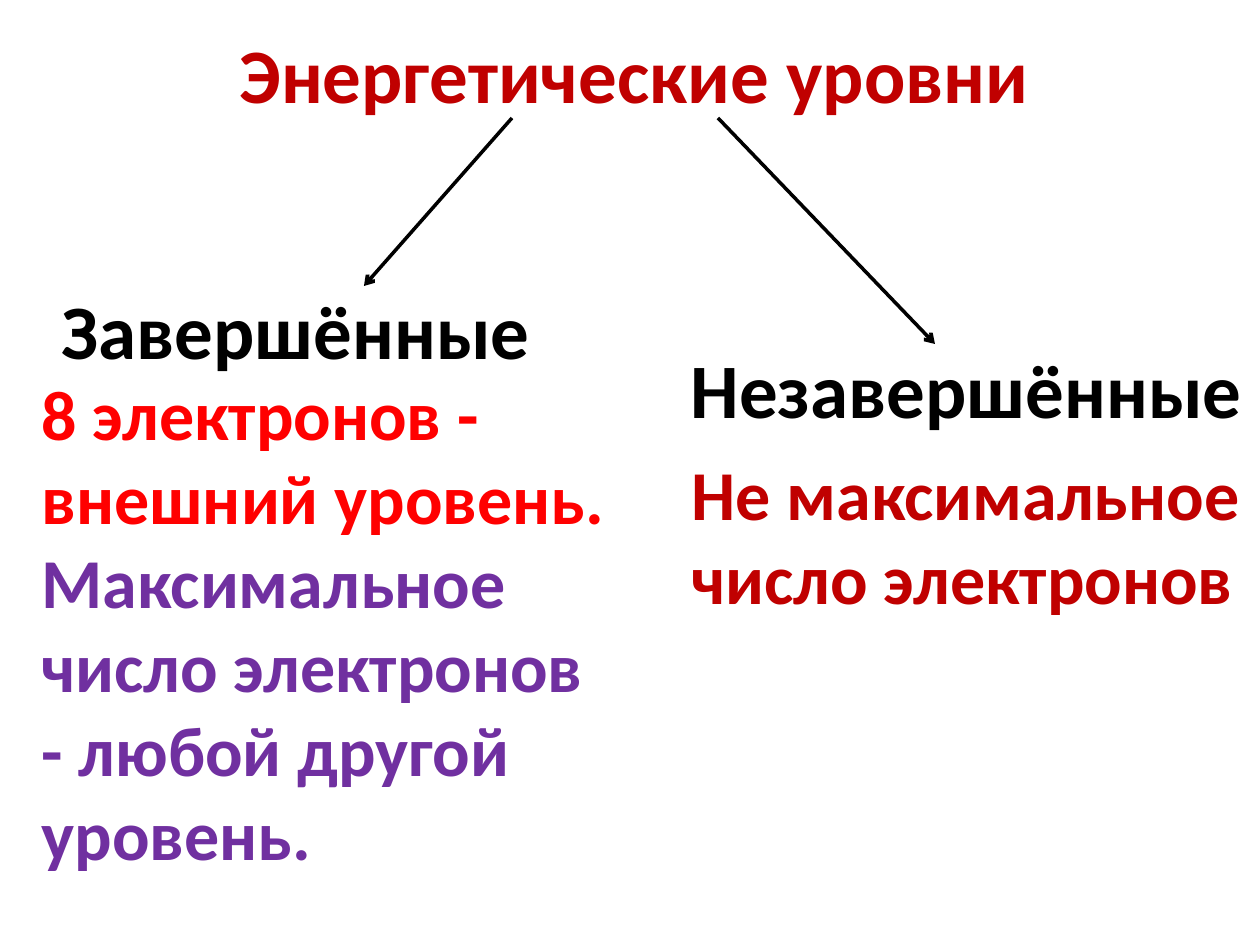
"""Build a slide that splits energy levels into complete and incomplete ones."""
from dataclasses import dataclass

from lxml import etree
from pptx import Presentation
from pptx import util as u
from pptx.dml.color import RGBColor
from pptx.enum import shapes, text
from pptx.oxml.ns import qn

SCALE = u.Inches(1) / 126


@dataclass(frozen=True)
class Theme:
    font: str = "Calibri"
    heading_size: int = 44
    body_size: int = 40
    line_width: int = 2
    dark_red: str = "C00000"
    red: str = "FF0000"
    purple: str = "7030A0"
    black: str = "000000"


@dataclass(frozen=True)
class Line:
    words: str
    color: str


@dataclass(frozen=True)
class Block:
    placeholder: int
    box: tuple[int, int, int, int]
    size: int
    lines: tuple[Line, ...]
    wrap: bool = False


@dataclass(frozen=True)
class Arrow:
    start: tuple[int, int]
    end: tuple[int, int]


THEME = Theme()
BLOCKS = (
    Block(0, (227, 20, 823, 106), THEME.heading_size,
          (Line("Энергетические уровни", THEME.dark_red),)),
    Block(1, (49, 276, 499, 106), THEME.heading_size,
          (Line("Завершённые", THEME.black),)),
    Block(3, (678, 335, 582, 106), THEME.heading_size,
          (Line("Незавершённые", THEME.black),)),
    Block(2, (29, 364, 601, 522), THEME.body_size,
          (Line("8 электронов - внешний уровень.", THEME.red),
           Line("Максимальное число электронов - любой другой уровень.", THEME.purple)),
          wrap=True),
    Block(4, (679, 444, 581, 183), THEME.body_size,
          (Line("Не максимальное число электронов", THEME.dark_red),), wrap=True),
)
ARROWS = (Arrow((512, 118), (364, 286)), Arrow((718, 118), (935, 344)))


def px(length: int) -> u.Emu:
    return u.Emu(round(length * SCALE))


def write_line(paragraph, line: Line, size: int) -> None:
    paragraph.text = line.words
    paragraph.alignment = text.PP_ALIGN.LEFT
    paragraph.space_before = u.Pt(0)
    properties = paragraph._p.get_or_add_pPr()
    properties.set("marL", "0")
    properties.set("indent", "0")
    etree.SubElement(properties, qn("a:buNone"))
    font = paragraph.font
    font.name, font.size, font.bold = THEME.font, u.Pt(size), True
    font.color.rgb = RGBColor.from_string(line.color)


def fill_block(slide, block: Block) -> None:
    holder = slide.placeholders[block.placeholder]
    holder.left, holder.top, holder.width, holder.height = map(px, block.box)
    frame = holder.text_frame
    frame.word_wrap = block.wrap
    frame.auto_size = text.MSO_AUTO_SIZE.SHAPE_TO_FIT_TEXT
    frame.vertical_anchor = text.MSO_ANCHOR.TOP
    for number, line in enumerate(block.lines):
        paragraph = frame.add_paragraph() if number else frame.paragraphs[0]
        write_line(paragraph, line, block.size)


def draw_arrow(slide, arrow: Arrow) -> None:
    connector = slide.shapes.add_connector(
        shapes.MSO_CONNECTOR.STRAIGHT, *map(px, arrow.start + arrow.end))
    connector.line.width = u.Pt(THEME.line_width)
    connector.line.color.rgb = RGBColor.from_string(THEME.black)
    etree.SubElement(connector.line._get_or_add_ln(), qn("a:tailEnd"), type="arrow")
    etree.SubElement(connector._element.spPr, qn("a:effectLst"))


def main() -> None:
    deck = Presentation()
    deck.slide_width, deck.slide_height = px(1260), px(945)
    slide = deck.slides.add_slide(deck.slide_layouts.get_by_name("Comparison"))
    for block in BLOCKS:
        fill_block(slide, block)
    for arrow in ARROWS:
        draw_arrow(slide, arrow)
    deck.save("out.pptx")


if __name__ == "__main__":
    main()
